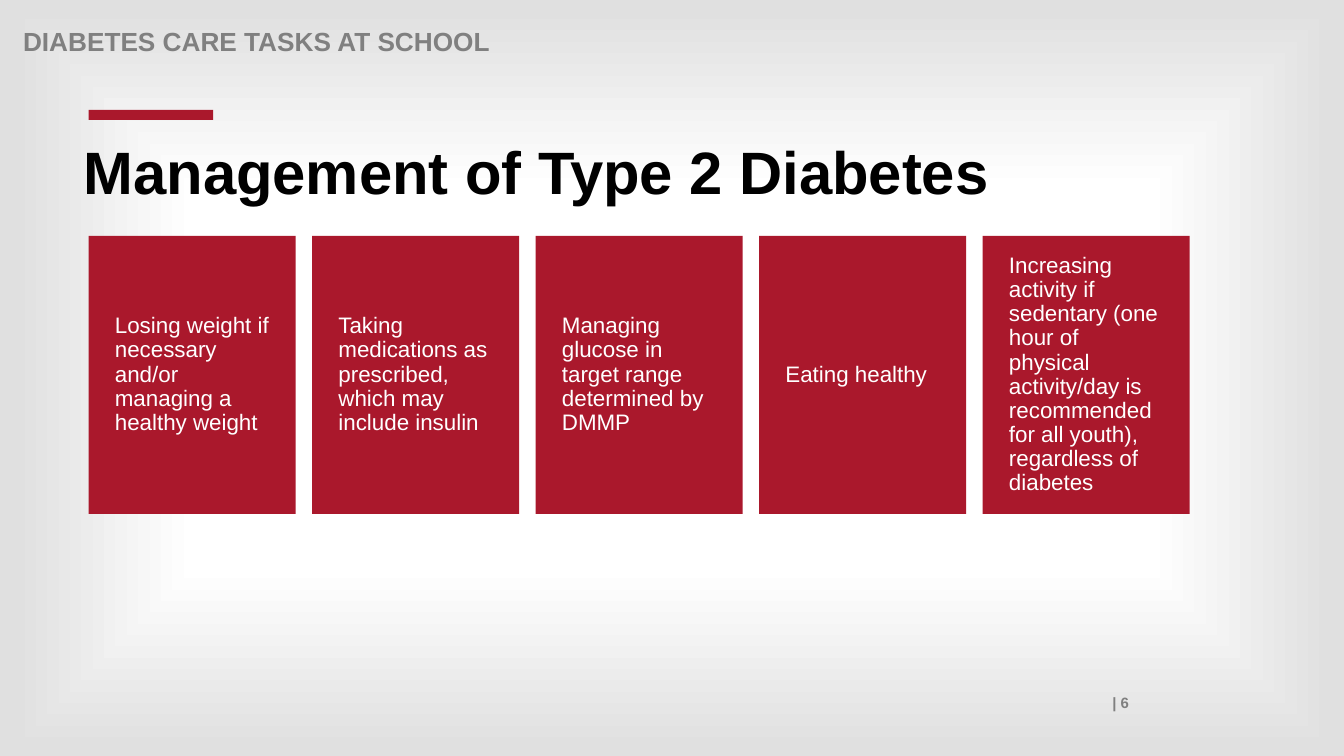
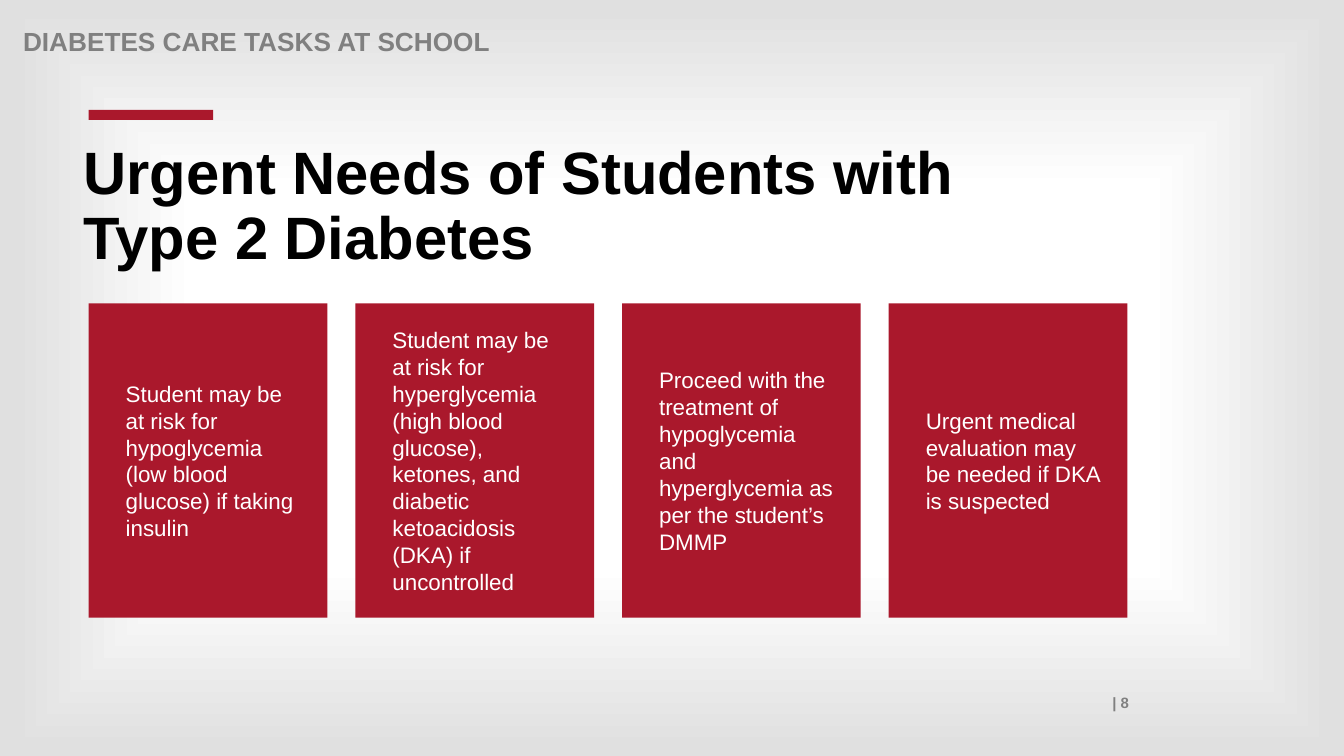
from lxml import etree
from pptx import Presentation
from pptx.dml.color import RGBColor
from pptx.enum.shapes import MSO_SHAPE
from pptx.enum.text import MSO_ANCHOR, PP_ALIGN
from pptx.oxml.ns import qn
from pptx.util import Pt

# Shared style
FONT = "Arial"
RED, GREY, BLACK, WHITE, EDGE = "AA182C", "808080", "000000", "FFFFFF", "E0E0E0"
STOPS = [(12, WHITE), (50, WHITE), (98, EDGE)]
LEFT = 63.3


def color(code):
    return RGBColor.from_string(code)


def style(para, size, code, bold=False, lead=1.0, align=PP_ALIGN.LEFT):
    para.alignment = align
    para.line_spacing = lead
    font = para.font
    font.name, font.size, font.bold = FONT, Pt(size), bold
    font.color.rgb = color(code)


def label(slide, box, text, *look, **more):
    frame = slide.shapes.add_textbox(*map(Pt, box)).text_frame
    frame.word_wrap = True
    para = frame.paragraphs[0]
    para.text = text
    style(para, *look, **more)


def block(slide, box):
    shape = slide.shapes.add_shape(MSO_SHAPE.RECTANGLE, *map(Pt, box))
    shape.shadow.inherit = False
    shape.fill.solid()
    shape.fill.fore_color.rgb = color(RED)
    shape.line.fill.background()
    return shape


def backdrop(master):
    """Soft grey edge around a white centre, for every slide."""
    master.background.fill.gradient()
    grad = master.element.find(".//" + qn("a:gradFill"))
    for child in list(grad):
        grad.remove(child)
    stops = etree.SubElement(grad, qn("a:gsLst"))
    for pos, code in STOPS:
        stop = etree.SubElement(stops, qn("a:gs"), pos=str(pos * 1000))
        etree.SubElement(stop, qn("a:srgbClr"), val=code)
    route = etree.SubElement(grad, qn("a:path"), {"path": "shape"})
    etree.SubElement(route, qn("a:fillToRect"),
                     {side: "50000" for side in "ltrb"})


def base(deck, title, page):
    """Blank slide with header, accent bar, title and page number."""
    slide = deck.slides.add_slide(deck.slide_layouts[6])
    label(slide, (87, 492, 726.5, 20), f"| {page}", 10.7, GREY, True,
          align=PP_ALIGN.RIGHT)
    label(slide, (9.4, 17.3, 792, 20), "DIABETES CARE TASKS AT SCHOOL",
          18.7, GREY, True, lead=0.9)
    block(slide, (LEFT, 78.5, 89, 7.2))
    label(slide, (52.6, 98.6, 792, 66), title, 42.7, BLACK, True, lead=0.9)
    return slide


def cards(slide, box, gap, pad, lead, texts):
    """Row of equal cards filling the box; pad is (left, right)."""
    left, top, width, height = box
    wide = (width - gap * (len(texts) - 1)) / len(texts)
    for i, text in enumerate(texts):
        card = block(slide, (left + i * (wide + gap), top, wide, height))
        frame = card.text_frame
        frame.word_wrap = True
        frame.vertical_anchor = MSO_ANCHOR.MIDDLE
        frame.margin_left, frame.margin_right = map(Pt, pad)
        para = frame.paragraphs[0]
        para.text = text
        style(para, 16, WHITE, lead=lead)


def main():
    deck = Presentation()
    deck.slide_width, deck.slide_height = Pt(960), Pt(540)
    backdrop(deck.slide_master)

    # Management
    slide = base(deck, "Management of Type 2 Diabetes", 6)
    cards(slide, (LEFT, 168.5, 786.5, 198.5), 11.8, (18.8, 18.8), 0.9, [
        "Losing weight if necessary and/or managing a healthy weight",
        "Taking medications as prescribed, which may include insulin",
        "Managing glucose in target range determined by DMMP",
        "Eating healthy",
        "Increasing activity if sedentary (one hour of physical activity/day "
        "is recommended for all youth), regardless of diabetes",
    ])

    # Urgent needs
    slide = base(deck, "Urgent Needs of Students with\vType 2 Diabetes", 8)
    cards(slide, (LEFT, 216.8, 742, 224.4), 20, (26.5, 18), 1.0, [
        "Student may be at risk for hypoglycemia (low blood glucose) "
        "if taking insulin",
        "Student may be at risk for hyperglycemia (high blood glucose), "
        "ketones, and diabetic ketoacidosis (DKA) if uncontrolled",
        "Proceed with the treatment of hypoglycemia and hyperglycemia "
        "as per the student’s DMMP",
        "Urgent medical evaluation may be needed if DKA is suspected",
    ])

    deck.save("out.pptx")


if __name__ == "__main__":
    main()
